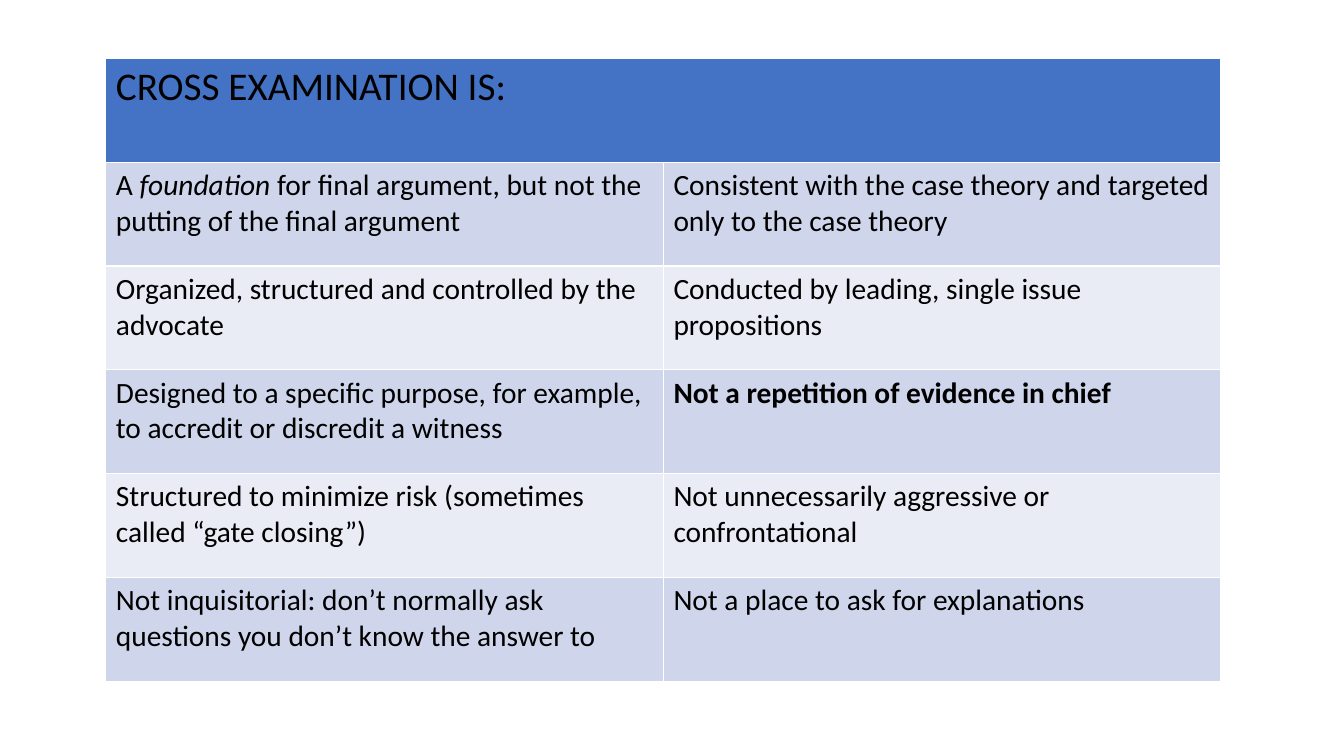
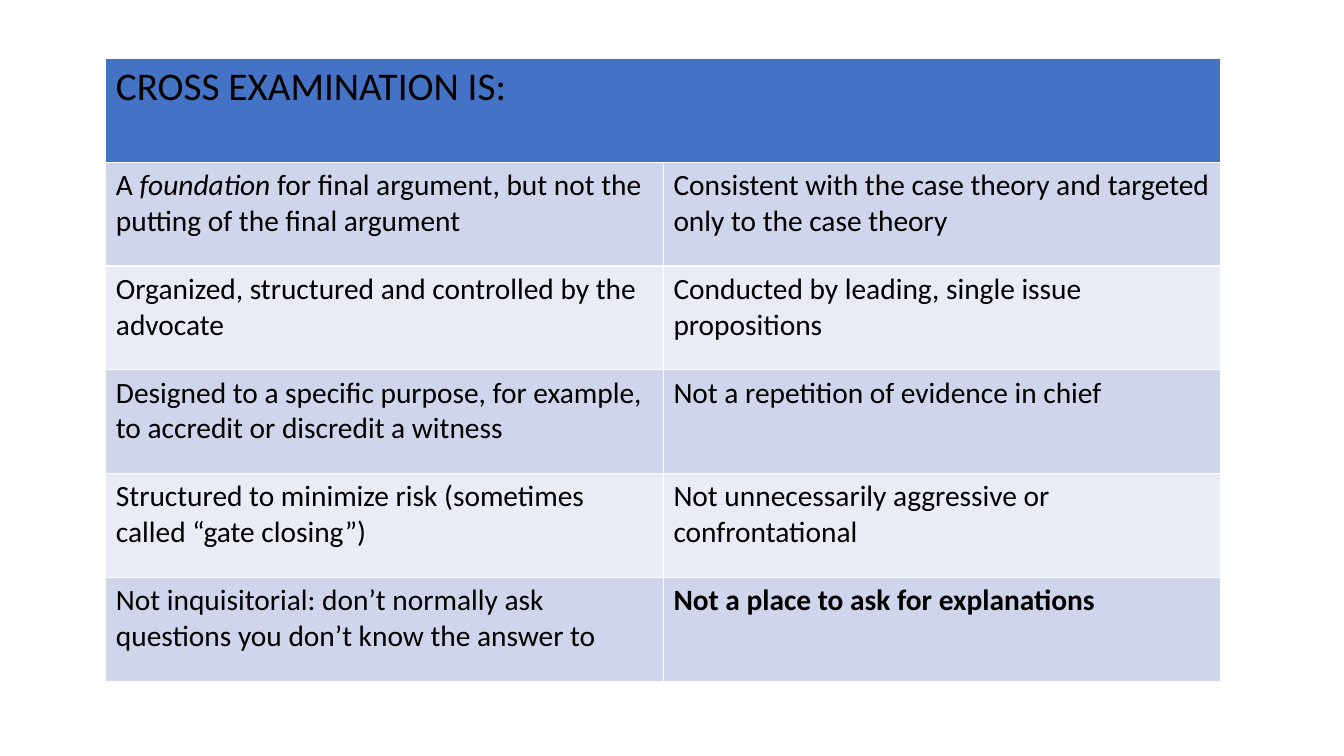
"""Build two slides tabulating what cross examination is, each stressing one point."""
from dataclasses import dataclass

from pptx import Presentation
from pptx.dml.color import RGBColor
from pptx.presentation import Presentation as Deck
from pptx.table import _Cell
from pptx.util import Emu, Pt

EMU_PER_PX = 9144
SLIDE_WIDTH, SLIDE_HEIGHT = 1333, 750
GRID_LEFT, GRID_TOP = 105, 58
COLUMN_WIDTH, ROW_HEIGHT = 553, 103
BLANK_LAYOUT = 6
FONT = "Calibri"
HEADING_SIZE, POINT_SIZE = 28, 21
COLORS = {
    "heading": "4472C4",
    "odd_row": "CFD5EA",
    "even_row": "E9EBF5",
    "text": "000000",
}
HEADING = "CROSS EXAMINATION IS:"


@dataclass(frozen=True)
class Phrase:
    text: str
    italic: bool = False


@dataclass(frozen=True)
class Point:
    phrases: tuple[Phrase, ...]


def plain(text: str) -> Point:
    return Point((Phrase(text),))


REPETITION = plain("Not a repetition of evidence in chief")
EXPLANATIONS = plain("Not a place to ask for explanations")
POINT_ROWS = (
    (
        Point((
            Phrase("A "),
            Phrase("foundation", italic=True),
            Phrase(" for final argument, but not the putting of the final argument"),
        )),
        plain("Consistent with the case theory and targeted only to the case theory"),
    ),
    (
        plain("Organized, structured and controlled by the advocate"),
        plain("Conducted by leading, single issue propositions"),
    ),
    (
        plain("Designed to a specific purpose, for example, to accredit or discredit a witness"),
        REPETITION,
    ),
    (
        plain("Structured to minimize risk (sometimes called “gate closing”)"),
        plain("Not unnecessarily aggressive or confrontational"),
    ),
    (
        plain("Not inquisitorial: don’t normally ask questions you don’t know the answer to"),
        EXPLANATIONS,
    ),
)
STRESSED_POINTS = (REPETITION, EXPLANATIONS)


def px(length: int) -> Emu:
    return Emu(length * EMU_PER_PX)


def fill_cell(cell: _Cell, point: Point, size: int, color: str, bold: bool = False) -> None:
    cell.fill.solid()
    cell.fill.fore_color.rgb = RGBColor.from_string(COLORS[color])
    paragraph = cell.text_frame.paragraphs[0]
    for phrase in point.phrases:
        run = paragraph.add_run()
        run.text = phrase.text
        run.font.name = FONT
        run.font.size = Pt(size)
        run.font.bold = bold
        run.font.italic = phrase.italic
        run.font.color.rgb = RGBColor.from_string(COLORS["text"])


def add_points_slide(deck: Deck, stressed: Point) -> None:
    slide = deck.slides.add_slide(deck.slide_layouts[BLANK_LAYOUT])
    row_count, column_count = len(POINT_ROWS) + 1, len(POINT_ROWS[0])
    grid = slide.shapes.add_table(
        row_count, column_count, px(GRID_LEFT), px(GRID_TOP),
        px(COLUMN_WIDTH * column_count), px(ROW_HEIGHT * row_count),
    ).table
    heading = grid.cell(0, 0)
    heading.merge(grid.cell(0, column_count - 1))
    fill_cell(heading, plain(HEADING), HEADING_SIZE, "heading")
    for row, points in enumerate(POINT_ROWS, start=1):
        band = "odd_row" if row % 2 else "even_row"
        for column, point in enumerate(points):
            fill_cell(grid.cell(row, column), point, POINT_SIZE, band, point == stressed)


def main() -> None:
    deck = Presentation()
    deck.slide_width, deck.slide_height = px(SLIDE_WIDTH), px(SLIDE_HEIGHT)
    for stressed in STRESSED_POINTS:
        add_points_slide(deck, stressed)
    deck.save("out.pptx")


if __name__ == "__main__":
    main()
